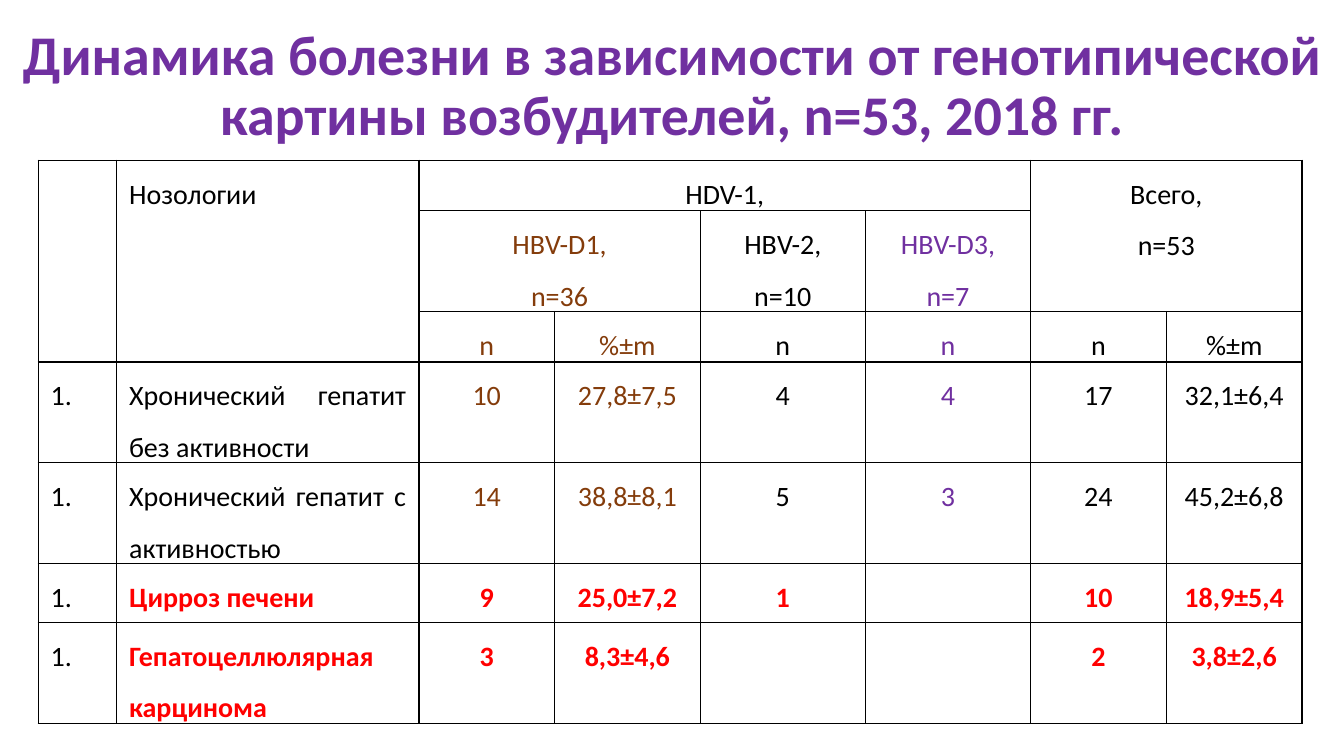
from lxml import etree
from pptx import Presentation
from pptx.dml.color import RGBColor
from pptx.enum.text import MSO_ANCHOR as Anchor, PP_ALIGN as Align
from pptx.oxml import parse_xml
from pptx.util import Pt

FONT = "Calibri"
PURPLE = RGBColor(0x70, 0x30, 0xA0)
BROWN = RGBColor(0x84, 0x3C, 0x0B)
RED = RGBColor(0xFF, 0, 0)
BLACK = RGBColor(0, 0, 0)
NS = "http://schemas.openxmlformats.org/drawingml/2006/main"

TITLE = "Динамика болезни в зависимости от генотипической картины возбудителей, n=53, 2018 гг."
ROWS = [
    ["", "Нозологии", "HDV-1,", "", "", "", "Всего,\nn=53", ""],
    ["", "", "HВV-D1,\nn=36", "", "HВV-2, n=10", "HВV-D3,\nn=7", "", ""],
    ["", "", "n", "%±m", "n", "n", "n", "%±m"],
    ["1.", "Хронический гепатит без активности", "10", "27,8±7,5", "4", "4", "17", "32,1±6,4"],
    ["1.", "Хронический гепатит с активностью", "14", "38,8±8,1", "5", "3", "24", "45,2±6,8"],
    ["1.", "Цирроз печени", "9", "25,0±7,2", "1", "", "10", "18,9±5,4"],
    ["1.", "Гепатоцеллюлярная карцинома", "3", "8,3±4,6", "", "", "2", "3,8±2,6"],
]
COLUMN_WIDTHS = [56, 216, 97, 104, 118, 118, 97, 97]
ROW_HEIGHTS = [36, 62, 21, 62, 62, 42, 42]
MERGES = [((0, 0), (2, 0)), ((0, 1), (2, 1)), ((0, 2), (0, 5)),
          ((0, 6), (1, 7)), ((1, 2), (1, 3))]
COLUMN_COLOURS = {2: BROWN, 3: BROWN, 5: PURPLE}
HEADER_ROWS = 3
SEVERE_ROWS = (5, 6)


def format_text(frame, size, colour, bold, align, spacing):
    for para in frame.paragraphs:
        para.alignment = align
        para.line_spacing = spacing
        for span in para.runs:
            span.font.name = FONT
            span.font.size = Pt(size)
            span.font.bold = bold
            span.font.color.rgb = colour


def add_borders(cell):
    """Put a thin black line on all four sides of the cell."""
    properties = cell._tc.get_or_add_tcPr()
    for place, side in enumerate(("lnL", "lnR", "lnT", "lnB")):
        line = parse_xml(f'<a:{side} xmlns:a="{NS}" w="{Pt(1)}"/>')
        fill = etree.SubElement(line, f"{{{NS}}}solidFill")
        etree.SubElement(fill, f"{{{NS}}}srgbClr", val=str(BLACK))
        properties.insert(place, line)


deck = Presentation()
deck.slide_width, deck.slide_height = Pt(960), Pt(540)
page = deck.slides.add_slide(deck.slide_layouts[6])

title_box = page.shapes.add_textbox(Pt(0), Pt(10), Pt(960), Pt(104.5))
title = title_box.text_frame
title.word_wrap = True
title.vertical_anchor = Anchor.MIDDLE
title.text = TITLE
format_text(title, 40, PURPLE, True, Align.CENTER, 0.9)

table = page.shapes.add_table(
    len(ROWS), len(COLUMN_WIDTHS), Pt(27.25), Pt(114.5),
    Pt(sum(COLUMN_WIDTHS)), Pt(sum(ROW_HEIGHTS))).table
table.first_row = False
table.horz_banding = False
for column, width in zip(table.columns, COLUMN_WIDTHS):
    column.width = Pt(width)
for row, height in zip(table.rows, ROW_HEIGHTS):
    row.height = Pt(height)
for (top, left), (bottom, right) in MERGES:
    table.cell(top, left).merge(table.cell(bottom, right))

for r, texts in enumerate(ROWS):
    for c, text in enumerate(texts):
        cell = table.cell(r, c)
        cell.fill.background()
        add_borders(cell)
        if not text:
            continue
        cell.margin_left = cell.margin_right = Pt(9)
        cell.margin_top = cell.margin_bottom = Pt(0)
        cell.vertical_anchor = Anchor.BOTTOM if r == HEADER_ROWS - 1 else Anchor.TOP
        severe = r in SEVERE_ROWS and c > 0
        spans_groups = r == 0
        colour = BLACK if spans_groups else COLUMN_COLOURS.get(c, BLACK)
        cell.text_frame.text = text
        format_text(cell.text_frame, 20, RED if severe else colour, severe,
                    Align.JUSTIFY if c < 2 else Align.CENTER, 1.5)

deck.save("out.pptx")
